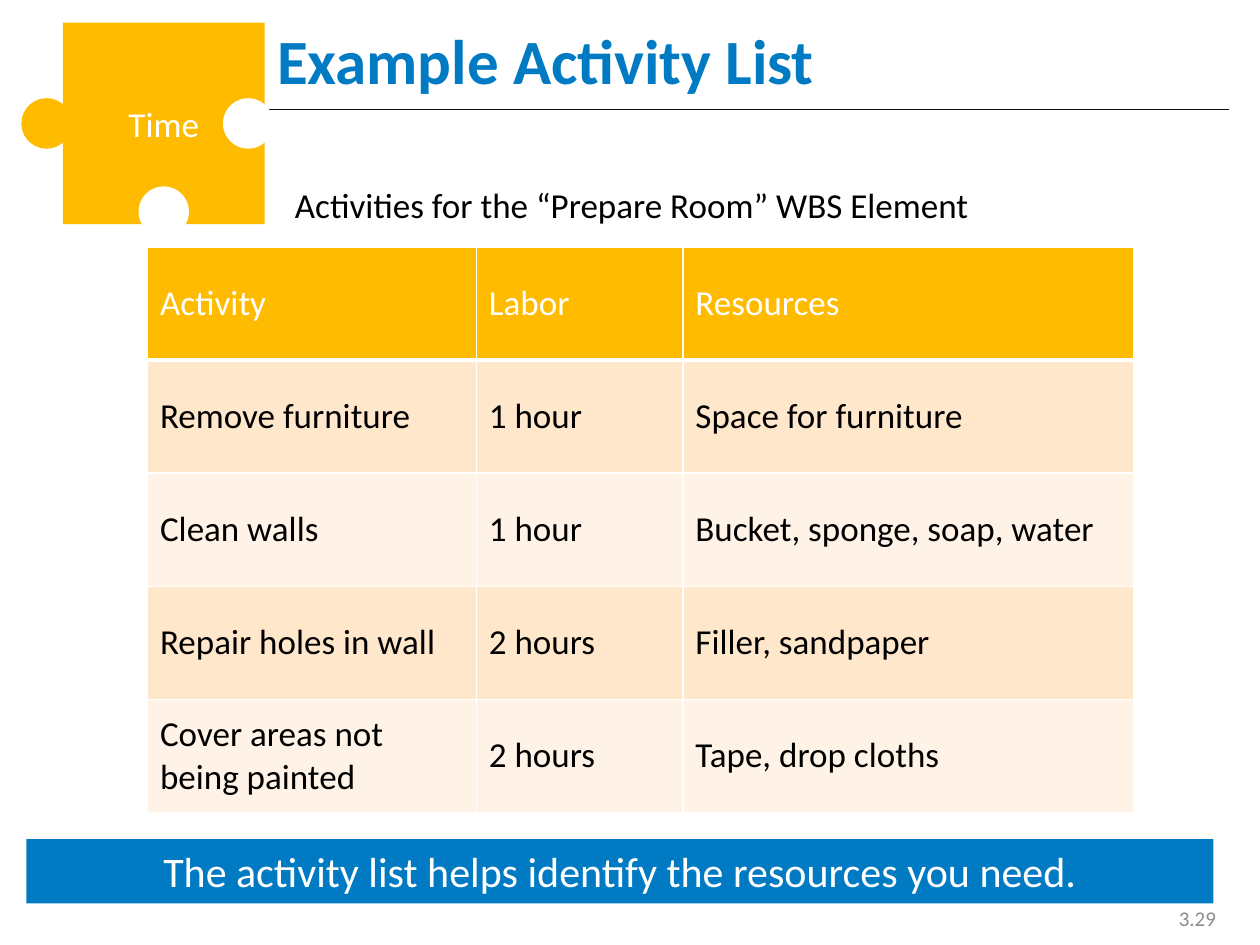
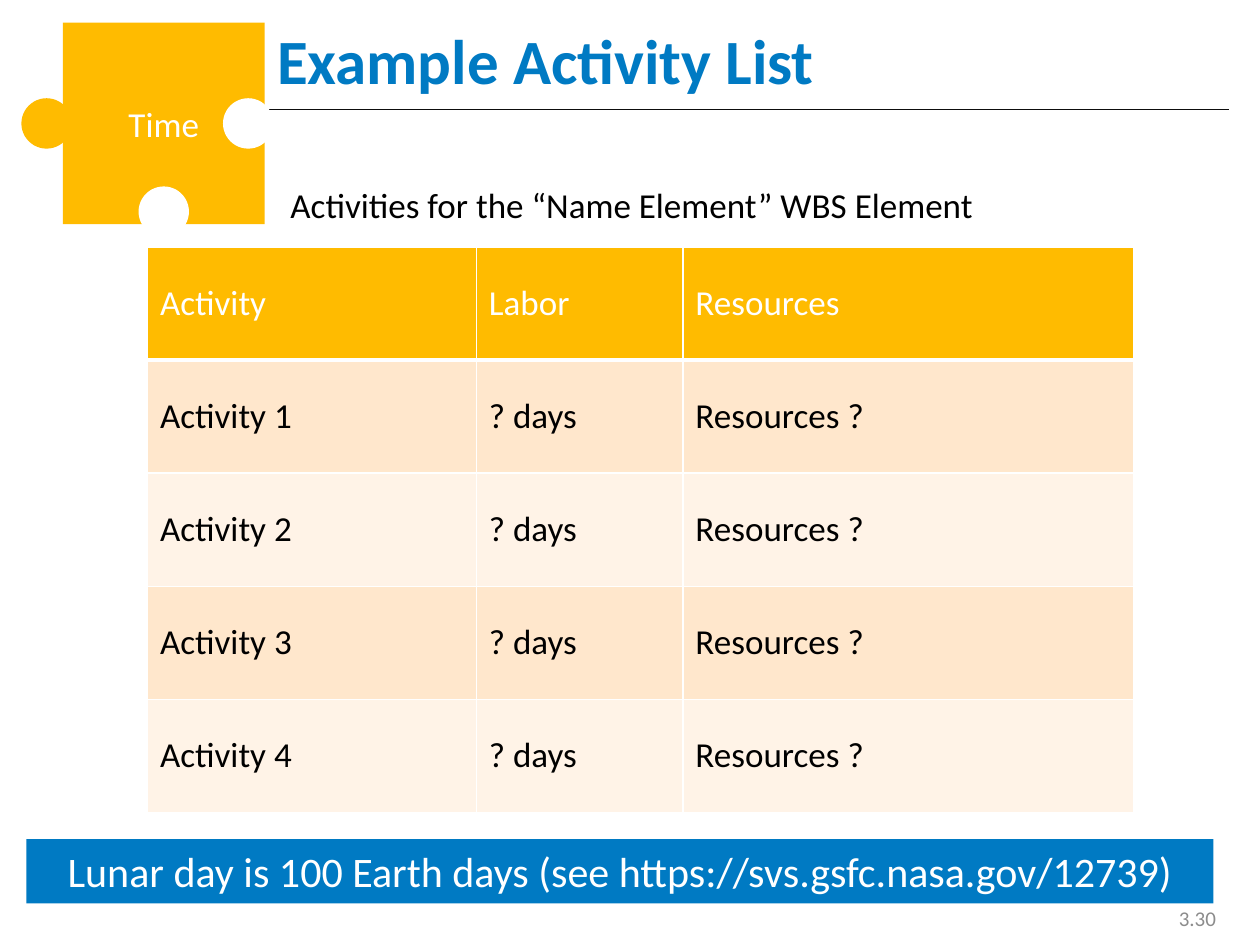
from dataclasses import dataclass

from lxml.etree import SubElement
from pptx import Presentation
from pptx.dml.color import RGBColor
from pptx.enum.shapes import MSO_CONNECTOR as Connector, MSO_SHAPE as Preset
from pptx.enum.text import MSO_ANCHOR as Anchor, PP_ALIGN as Align
from pptx.oxml.ns import qn
from pptx.util import Inches, Pt


@dataclass(frozen=True)
class Theme:
    font: str = "Calibri"
    blue: str = "007AC3"
    amber: str = "FFBB00"
    dark_band: str = "FFE7CC"
    light_band: str = "FFF3E7"
    white: str = "FFFFFF"
    black: str = "000000"
    rule: str = "0D0D0D"
    grey: str = "8C8C8C"
    title_size: int = 36
    banner_size: int = 24
    body_size: int = 20
    number_size: int = 12


@dataclass(frozen=True)
class Area:
    left: float
    top: float
    width: float
    height: float

    def lengths(self) -> tuple:
        return tuple(Inches(n) for n in (self.left, self.top, self.width, self.height))


@dataclass(frozen=True)
class ActivitySlide:
    number: str
    element: str
    activities: tuple
    banner: str


THEME = Theme()
TITLE = Area(2.1, 0.08, 7.65, 0.78)
NUMBER = Area(7.42, 7.15, 2.33, 0.27)
BANNER = Area(0.21, 6.66, 9.42, 0.51)
CAPTION = Area(1.5, 1.41, 7.03, 0.44)
TABLE = Area(1.17, 1.96, 7.83, 4.49)
PIECE = Area(0.5, 0.18, 1.6, 1.6)
KNOB = 0.4
COLUMN_WIDTHS = (2.61, 1.64, 3.58)
HEADINGS = ("Activity", "Labor", "Resources")

SLIDES = (
    ActivitySlide(
        "3.29",
        "Prepare Room",
        (
            ("Remove furniture", "1 hour", "Space for furniture"),
            ("Clean walls", "1 hour", "Bucket, sponge, soap, water"),
            ("Repair holes in wall", "2 hours", "Filler, sandpaper"),
            ("Cover areas not being painted", "2 hours", "Tape, drop cloths"),
        ),
        "The activity list helps identify the resources you need.",
    ),
    ActivitySlide(
        "3.30",
        "Name Element",
        tuple((f"Activity {n}", "? days", "Resources ?") for n in range(1, 5)),
        "Lunar day is 100 Earth days (see https://svs.gsfc.nasa.gov/12739)",
    ),
)


def write(frame, text: str, *, size: int = THEME.body_size, color: str = THEME.black,
          bold: bool = False, align=Align.LEFT) -> None:
    para = frame.paragraphs[0]
    para.alignment = align
    span = para.add_run()
    span.text = text
    span.font.name = THEME.font
    span.font.size = Pt(size)
    span.font.bold = bold
    span.font.color.rgb = RGBColor.from_string(color)


def add_text(page, area: Area, text: str, anchor=Anchor.TOP, **style) -> None:
    frame = page.shapes.add_textbox(*area.lengths()).text_frame
    frame.word_wrap = True
    frame.vertical_anchor = anchor
    write(frame, text, **style)


def add_block(shapes, preset, area: Area, color: str):
    shape = shapes.add_shape(preset, *area.lengths())
    shape.shadow.inherit = False
    shape.fill.solid()
    shape.fill.fore_color.rgb = RGBColor.from_string(color)
    shape.line.fill.background()
    return shape


def add_title_rule(page) -> None:
    rule = page.shapes.add_connector(
        Connector.STRAIGHT, Inches(0.33), Inches(0.87), Inches(9.75), Inches(0.87))
    rule.line.color.rgb = RGBColor.from_string(THEME.rule)
    rule.line.width = Pt(0.75)
    SubElement(rule._element.spPr, qn("a:effectLst"))


def add_puzzle_piece(page) -> None:
    shapes = page.shapes.add_group_shape().shapes

    def add_knob(left: float, top: float, color: str) -> None:
        add_block(shapes, Preset.OVAL, Area(left, top, KNOB, KNOB), color)

    add_knob(0.17, 0.78, THEME.amber)
    body = add_block(shapes, Preset.RECTANGLE, PIECE, THEME.amber)
    body.text_frame.vertical_anchor = Anchor.MIDDLE
    write(body.text_frame, "Time", color=THEME.white, align=Align.CENTER)
    add_knob(1.1, 1.48, THEME.white)
    add_knob(1.77, 0.78, THEME.white)


def add_borders(cell, bottom: float) -> None:
    properties = cell._tc.get_or_add_tcPr()
    for side, points in (("L", 1), ("R", 1), ("T", 1), ("B", bottom)):
        line = SubElement(properties, qn(f"a:ln{side}"), w=str(Pt(points)))
        fill = SubElement(line, qn("a:solidFill"))
        SubElement(fill, qn("a:srgbClr"), val=THEME.white)


def add_activity_table(page, activities: tuple) -> None:
    rows = (HEADINGS, *activities)
    table = page.shapes.add_table(len(rows), len(HEADINGS), *TABLE.lengths()).table
    for column, width in zip(table.columns, COLUMN_WIDTHS):
        column.width = Inches(width)
    for r, texts in enumerate(rows):
        heading = r == 0
        band = THEME.dark_band if r % 2 else THEME.light_band
        for c, text in enumerate(texts):
            cell = table.cell(r, c)
            add_borders(cell, bottom=3 if heading else 1)
            cell.fill.solid()
            cell.fill.fore_color.rgb = RGBColor.from_string(THEME.amber if heading else band)
            cell.vertical_anchor = Anchor.MIDDLE
            write(cell.text_frame, text, color=THEME.white if heading else THEME.black)


def add_banner(page, text: str) -> None:
    banner = add_block(page.shapes, Preset.RECTANGLE, BANNER, THEME.blue)
    banner.text_frame.word_wrap = True
    banner.text_frame.vertical_anchor = Anchor.TOP
    write(banner.text_frame, text, size=THEME.banner_size, color=THEME.white,
          align=Align.CENTER)


def build_slide(deck, content: ActivitySlide) -> None:
    page = deck.slides.add_slide(deck.slide_layouts[6])
    # Shared frame
    add_title_rule(page)
    add_text(page, TITLE, "Example Activity List", Anchor.MIDDLE,
             size=THEME.title_size, color=THEME.blue, bold=True)
    add_text(page, NUMBER, content.number, Anchor.MIDDLE,
             size=THEME.number_size, color=THEME.grey, align=Align.RIGHT)
    add_banner(page, content.banner)
    add_puzzle_piece(page)
    # Activity list
    add_text(page, CAPTION, f"Activities for the “{content.element}” WBS Element",
             align=Align.CENTER)
    add_activity_table(page, content.activities)


def main() -> None:
    deck = Presentation()
    deck.slide_width = Inches(10)
    deck.slide_height = Inches(7.5)
    for content in SLIDES:
        build_slide(deck, content)
    deck.save("out.pptx")


if __name__ == "__main__":
    main()
